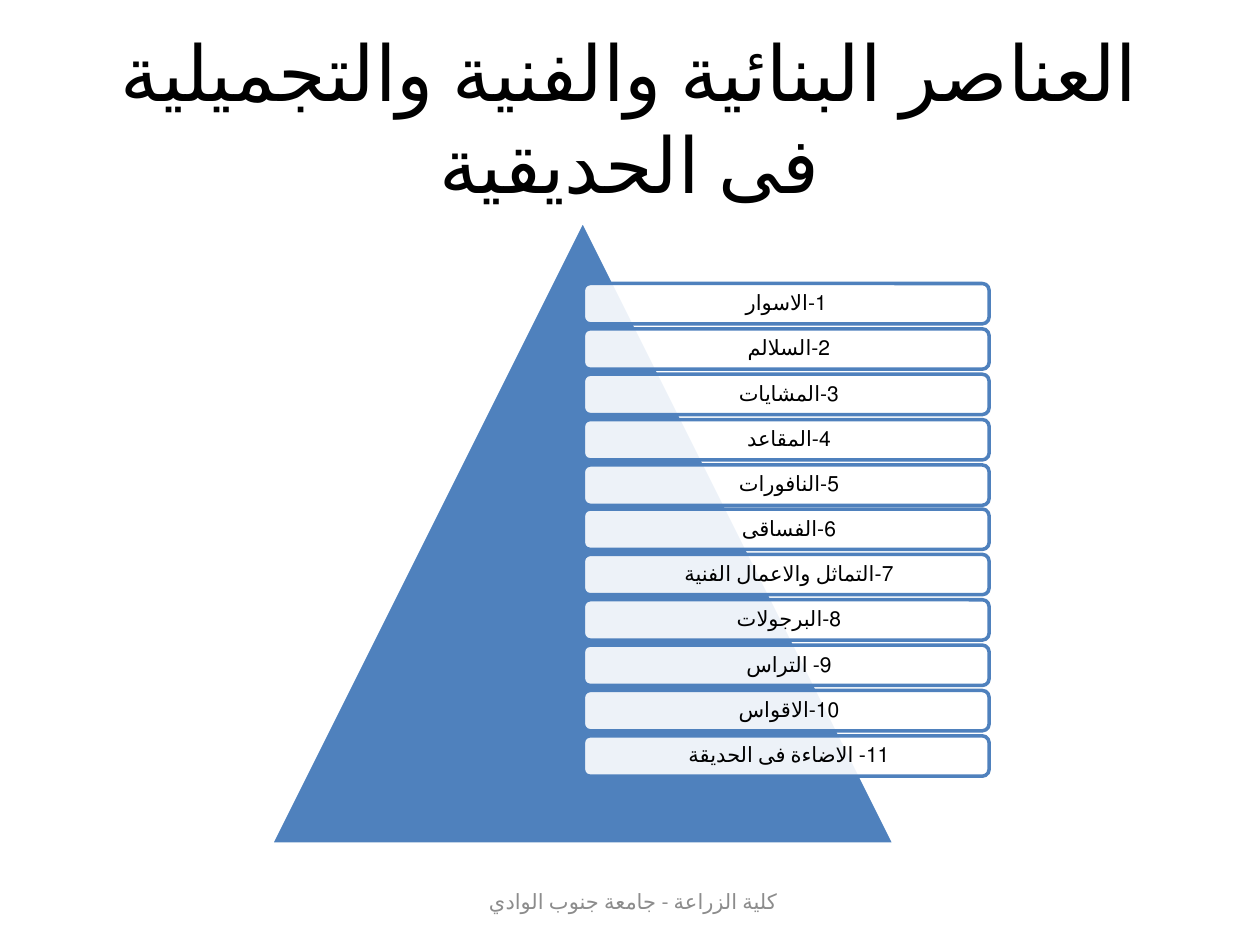
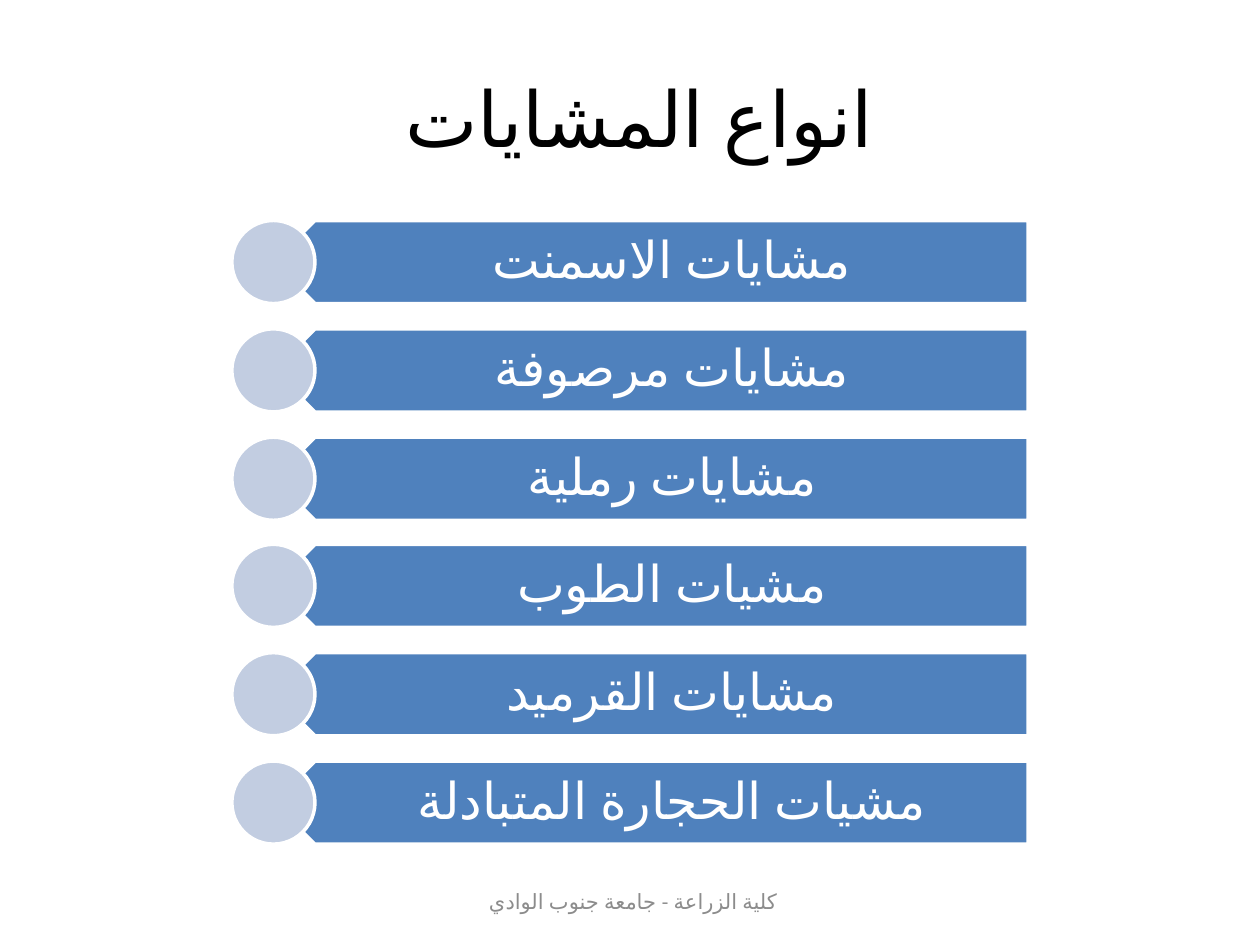
from typing import NamedTuple

from lxml import etree
from pptx import Presentation
from pptx import util as u
from pptx.dml.color import RGBColor
from pptx.enum import lang, shapes, text
from pptx.oxml import ns

PX = u.Inches(1) // 100
FONT = "Calibri"
BLACK = RGBColor(0x00, 0x00, 0x00)
WHITE = RGBColor(0xFF, 0xFF, 0xFF)
GREY = RGBColor(0x8C, 0x8C, 0x8C)
BLUE = RGBColor(0x4F, 0x81, 0xBD)
PALE_BLUE = RGBColor(0xC2, 0xCD, 0xE1)
FOOTER = "كلية الزراعة - جامعة جنوب الوادي "

GARDEN_TITLE = "العناصر البنائية والفنية والتجميلية فى الحديقية"
GARDEN_ELEMENTS = [
    "1-الاسوار",
    "2-السلالم ",
    "3-المشايات ",
    "4-المقاعد ",
    "5-النافورات ",
    "6-الفساقى ",
    "7-التماثل والاعمال الفنية ",
    "8-البرجولات ",
    "9- التراس ",
    "10-الاقواس ",
    "11- الاضاءة فى الحديقة ",
]
PATHS_TITLE = "انواع المشايات "
PATH_TYPES = [
    "مشايات الاسمنت ",
    "مشايات مرصوفة ",
    "مشايات رملية ",
    "مشيات الطوب ",
    "مشايات القرميد ",
    "مشيات الحجارة المتبادلة ",
]


class Box(NamedTuple):
    left: int
    top: int
    width: int
    height: int

    def emu(self) -> list[int]:
        return [length * PX for length in self]


class Insets(NamedTuple):
    left: int
    top: int
    right: int
    bottom: int


class TextStyle(NamedTuple):
    size: int
    color: RGBColor
    spacing: float | None = None
    insets: Insets = Insets(10, 5, 10, 5)


TITLE_BOX = Box(50, 30, 900, 125)
FOOTER_BOX = Box(342, 695, 317, 40)
TRIANGLE = Box(215, 175, 495, 495)
FIRST_ELEMENT = Box(463, 225, 322, 32)
LAST_ELEMENT_TOP = 584
FIRST_BAND = Box(217, 175, 599, 66)
FIRST_LABEL = Box(234, 175, 582, 66)
FIRST_DISC = Box(184, 175, 66, 66)
LAST_BAND_TOP = 604

TITLE_STYLE = TextStyle(44, BLACK)
FOOTER_STYLE = TextStyle(12, GREY)
ELEMENT_STYLE = TextStyle(12, BLACK, 0.9, Insets(5, 5, 5, 5))
PATH_STYLE = TextStyle(29, WHITE, 0.9, Insets(29, 12, 23, 12))


def spread(first: int, last: int, count: int) -> list[int]:
    return [round(first + i * (last - first) / (count - 1)) for i in range(count)]


def write(tf, words: str, style: TextStyle) -> None:
    tf.word_wrap = True
    tf.auto_size = text.MSO_AUTO_SIZE.NONE
    tf.vertical_anchor = text.MSO_ANCHOR.MIDDLE
    tf.margin_left, tf.margin_top, tf.margin_right, tf.margin_bottom = (
        inset * PX for inset in style.insets
    )
    p = tf.paragraphs[0]
    r = p.add_run()
    r.text = words
    r.font.language_id = lang.MSO_LANGUAGE_ID.ARABIC_EGYPT
    p.alignment = text.PP_ALIGN.CENTER
    p.line_spacing = style.spacing
    p.font.name = FONT
    p.font.size = u.Pt(style.size)
    p.font.color.rgb = style.color
    p._p.get_or_add_pPr().set("rtl", "1")


def add_label(s, box: Box, words: str, style: TextStyle) -> None:
    write(s.shapes.add_textbox(*box.emu()).text_frame, words, style)


def add_figure(s, kind, box: Box, fill: RGBColor, line: RGBColor):
    sp = s.shapes.add_shape(kind, *box.emu())
    sp.shadow.inherit = False
    sp.fill.solid()
    sp.fill.fore_color.rgb = fill
    sp.line.color.rgb = line
    sp.line.width = u.Pt(2)
    return sp


def set_opacity(sp, percent: int) -> None:
    color = sp._element.spPr.find(ns.qn("a:solidFill"))[0]
    etree.SubElement(color, ns.qn("a:alpha")).set("val", str(percent * 1000))


def add_titled_slide(prs, title: str):
    s = prs.slides.add_slide(prs.slide_layouts[5])
    sp = s.shapes.title
    sp.left, sp.top, sp.width, sp.height = TITLE_BOX.emu()
    write(sp.text_frame, title, TITLE_STYLE)
    add_label(s, FOOTER_BOX, FOOTER, FOOTER_STYLE)
    return s


def build_garden_elements(prs) -> None:
    s = add_titled_slide(prs, GARDEN_TITLE)
    add_figure(s, shapes.MSO_SHAPE.ISOSCELES_TRIANGLE, TRIANGLE, BLUE, WHITE)
    tops = spread(FIRST_ELEMENT.top, LAST_ELEMENT_TOP, len(GARDEN_ELEMENTS))
    for top, words in zip(tops, GARDEN_ELEMENTS):
        box = FIRST_ELEMENT._replace(top=top)
        sp = add_figure(s, shapes.MSO_SHAPE.ROUNDED_RECTANGLE, box, WHITE, BLUE)
        set_opacity(sp, 90)
        write(sp.text_frame, words, ELEMENT_STYLE)


def build_path_types(prs) -> None:
    s = add_titled_slide(prs, PATHS_TITLE)
    tops = spread(FIRST_BAND.top, LAST_BAND_TOP, len(PATH_TYPES))
    for top, words in zip(tops, PATH_TYPES):
        band = FIRST_BAND._replace(top=top)
        add_figure(s, shapes.MSO_SHAPE.PENTAGON, band, BLUE, WHITE).rotation = 180
        add_label(s, FIRST_LABEL._replace(top=top), words, PATH_STYLE)
        disc = FIRST_DISC._replace(top=top)
        add_figure(s, shapes.MSO_SHAPE.OVAL, disc, PALE_BLUE, WHITE)


def main() -> None:
    prs = Presentation()
    prs.slide_width, prs.slide_height = 1000 * PX, 750 * PX
    build_garden_elements(prs)
    build_path_types(prs)
    prs.save("out.pptx")


if __name__ == "__main__":
    main()
